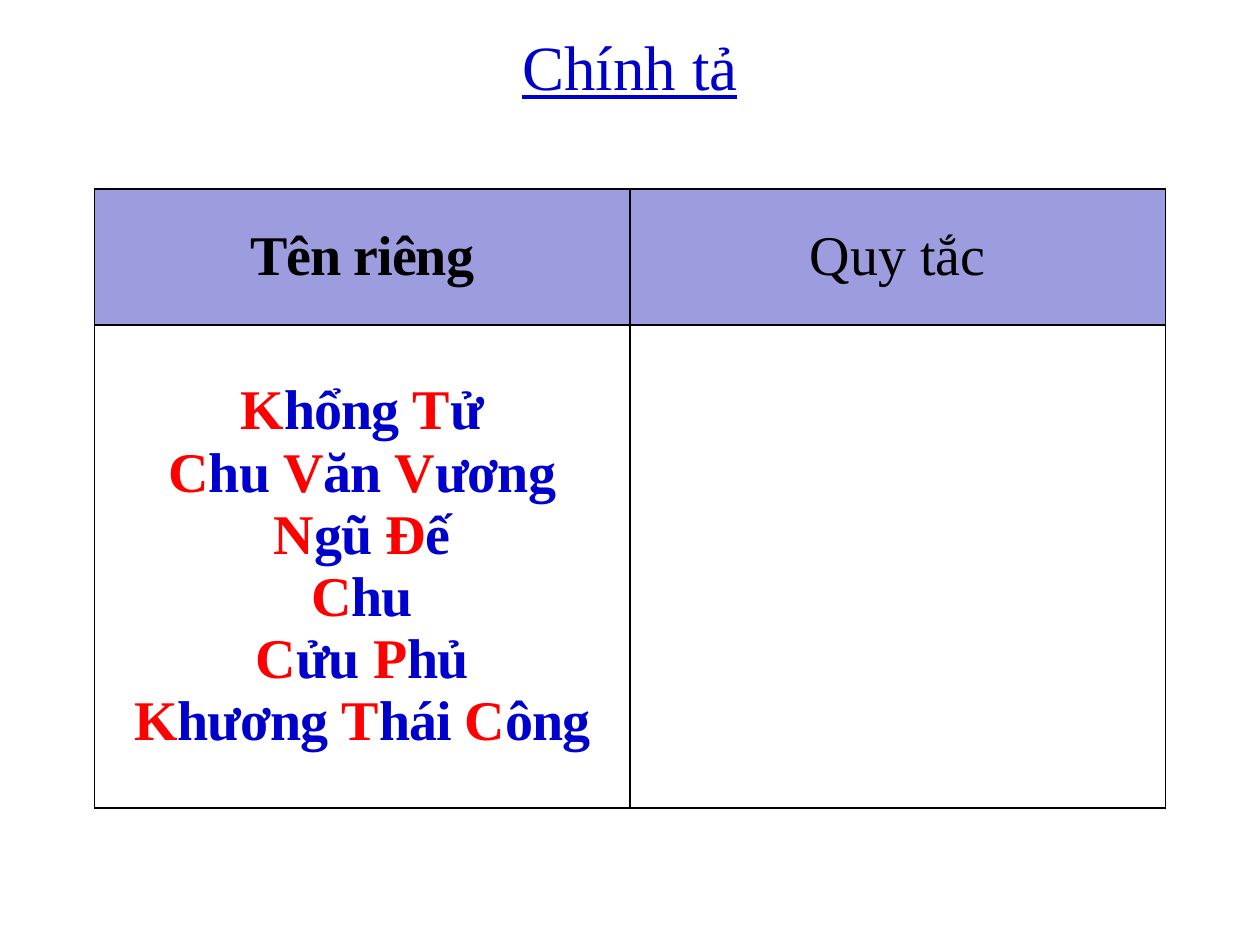
from dataclasses import dataclass
from itertools import groupby

from lxml import etree
from pptx import Presentation
from pptx.dml.color import RGBColor
from pptx.enum.text import MSO_ANCHOR, PP_ALIGN
from pptx.oxml.ns import qn
from pptx.util import Inches, Pt

CENTER, MIDDLE = PP_ALIGN.CENTER, MSO_ANCHOR.MIDDLE
BLACK, WHITE, BLUE, RED, LILAC = "000000", "FFFFFF", "0000CC", "FF0000", "9C9CDF"
WIDTH, HEIGHT = Inches(10), Inches(7.5)
COLUMNS = [0.425, 0.425]  # shares of the slide width
ROWS = [0.144, 0.511]  # shares of the slide height
NAMES = ["Khổng Tử", "Chu Văn Vương", "Ngũ Đế", "Chu", "Cửu Phủ", "Khương Thái Công"]


@dataclass
class Style:
    size: int = 32
    color: str = BLACK
    capital: str = BLACK
    bold: bool = False
    underline: bool = False
    spacing: int = 0  # hundredths of a point


@dataclass
class Cell:
    row: int
    col: int
    fill: str
    lines: list[str]
    style: Style


def rgb(value: str) -> RGBColor:
    return RGBColor.from_string(value)


def add_run(p, text: str, color: str, style: Style) -> None:
    r = p.add_run()
    r.text = text
    font = {"name": "Times New Roman", "size": Pt(style.size),
            "bold": style.bold, "underline": style.underline}
    for name, value in font.items():
        setattr(r.font, name, value)
    r.font.color.rgb = rgb(color)
    if style.spacing:
        r.font._element.set("spc", str(style.spacing))


def write_lines(tf, lines: list[str], style: Style) -> None:
    """One paragraph per line; capitals may have a colour of their own."""
    for i, line in enumerate(lines):
        p = tf.add_paragraph() if i else tf.paragraphs[0]
        p.alignment = CENTER
        if style.capital == style.color:
            add_run(p, line, style.color, style)
            continue
        for upper, letters in groupby(line, str.isupper):
            add_run(p, "".join(letters), style.capital if upper else style.color, style)


def add_borders(cell, color: str, width: float) -> None:
    props = cell._tc.get_or_add_tcPr()
    for i, side in enumerate(("a:lnL", "a:lnR", "a:lnT", "a:lnB")):
        ln = etree.Element(qn(side), w=str(Pt(width)))
        fill = etree.SubElement(ln, qn("a:solidFill"))
        etree.SubElement(fill, qn("a:srgbClr"), val=color)
        props.insert(i, ln)


def add_title(s, text: str) -> None:
    box = s.shapes.add_textbox(int(0.05 * WIDTH), Inches(0.25), int(0.9 * WIDTH), Inches(0.53))
    tf = box.text_frame
    tf.word_wrap = True
    tf.vertical_anchor = MIDDLE
    write_lines(tf, [text], Style(size=36, color=BLUE, capital=BLUE, underline=True))


def add_name_table(s, cells: list[Cell]) -> None:
    frame = s.shapes.add_table(len(ROWS), len(COLUMNS), int(0.075 * WIDTH), int(0.2 * HEIGHT),
                               int(sum(COLUMNS) * WIDTH), int(sum(ROWS) * HEIGHT))
    table = frame.table
    for column, share in zip(table.columns, COLUMNS):
        column.width = int(share * WIDTH)
    for row, share in zip(table.rows, ROWS):
        row.height = int(share * HEIGHT)
    for item in cells:
        cell = table.cell(item.row, item.col)
        cell.vertical_anchor = MIDDLE
        cell.fill.solid()
        cell.fill.fore_color.rgb = rgb(item.fill)
        add_borders(cell, BLACK, 1)
        write_lines(cell.text_frame, item.lines, item.style)


def main() -> None:
    prs = Presentation()
    prs.slide_width, prs.slide_height = WIDTH, HEIGHT
    s = prs.slides.add_slide(prs.slide_layouts[6])

    # Title
    add_title(s, "Chính tả")

    # Proper names on the left, room for the rule on the right
    add_name_table(s, [
        Cell(0, 0, LILAC, ["Tên riêng"], Style(bold=True, spacing=-60)),
        Cell(0, 1, LILAC, ["Quy tắc"], Style()),
        Cell(1, 0, WHITE, NAMES, Style(color=BLUE, capital=RED, bold=True, spacing=-60)),
        Cell(1, 1, WHITE, [], Style()),
    ])
    prs.save("out.pptx")


if __name__ == "__main__":
    main()
